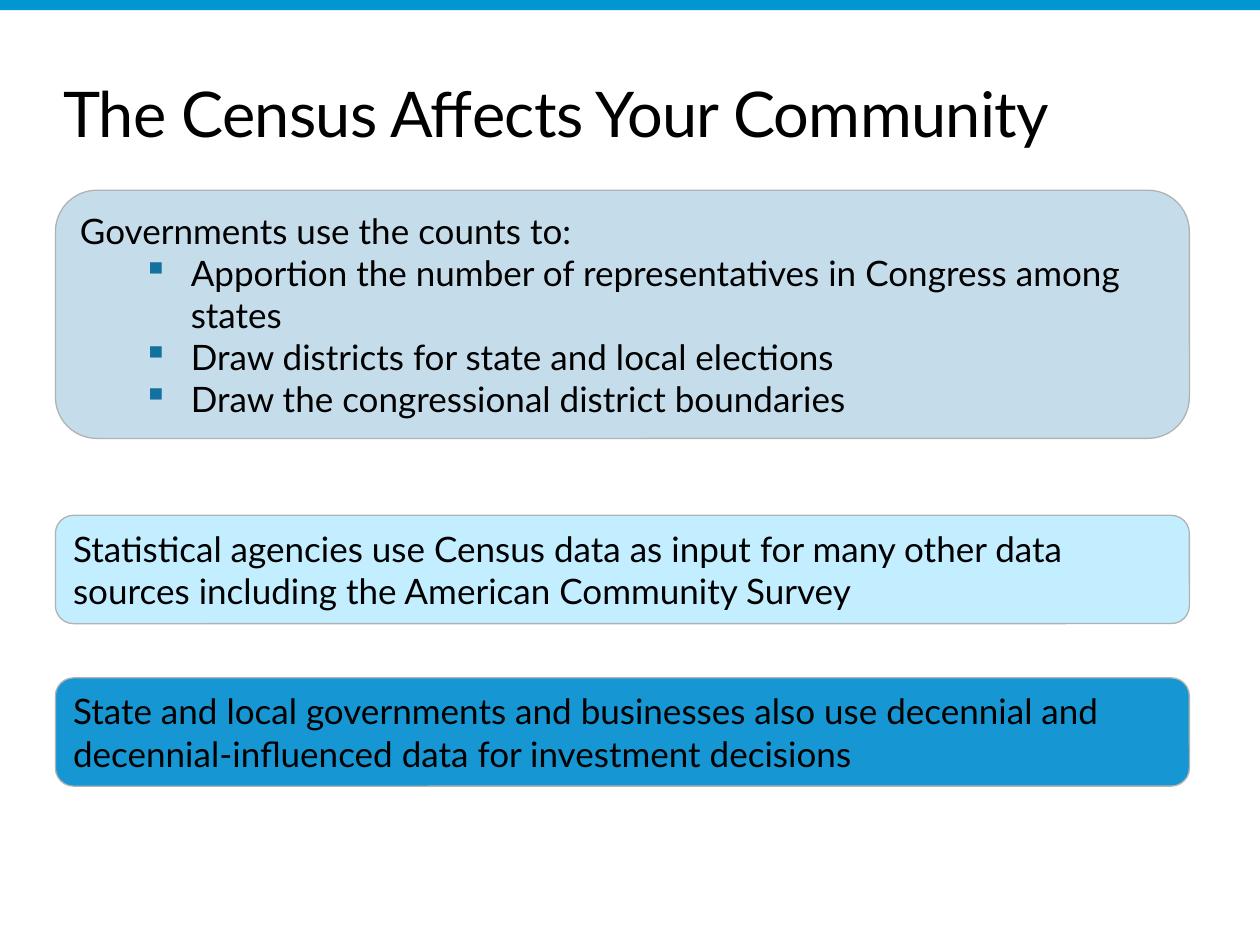
from lxml import etree
from pptx import Presentation
from pptx.dml.color import RGBColor
from pptx.enum.shapes import MSO_SHAPE
from pptx.enum.text import MSO_ANCHOR, PP_ALIGN
from pptx.oxml.ns import qn
from pptx.util import Inches, Pt

RECT, ROUNDED = MSO_SHAPE.RECTANGLE, MSO_SHAPE.ROUNDED_RECTANGLE
MIDDLE, LEFT = MSO_ANCHOR.MIDDLE, PP_ALIGN.LEFT

BLACK = RGBColor(0x00, 0x00, 0x00)
BAR_BLUE = RGBColor(0x00, 0x96, 0xD2)
PALE_BLUE = RGBColor(0xC5, 0xDD, 0xEB)
LIGHT_CYAN = RGBColor(0xC3, 0xEE, 0xFF)
STRONG_BLUE = RGBColor(0x16, 0x96, 0xD2)
BORDER_GRAY = RGBColor(0xB1, 0xB3, 0xB1)
BULLET_BLUE = RGBColor(0x12, 0x71, 0x9E)

FONT = "Lato"
SLIDE_W, SLIDE_H = 10, 7.5
CARD_LEFT, CARD_W = 0.44, 9

# Top, height, fill, lead sentence and bullets of each card
CARDS = [
    (1.51, 1.97, PALE_BLUE, "Governments use the counts to:",
     ["Apportion the number of representatives in Congress among states",
      "Draw districts for state and local elections",
      "Draw the congressional district boundaries"]),
    (4.09, 0.86, LIGHT_CYAN,
     "Statistical agencies use Census data as input for many other data "
     "sources including the American Community Survey", []),
    (5.38, 0.86, STRONG_BLUE,
     "State and local governments and businesses also use decennial and "
     "decennial-influenced data for investment decisions", []),
]


def add_bullet(p, indent=0.88, hanging=0.38):
    p.level = 1
    pPr = p._p.get_or_add_pPr()
    pPr.set("marL", str(Inches(indent)))
    pPr.set("indent", str(-Inches(hanging)))
    color = etree.SubElement(pPr, qn("a:buClr"))
    etree.SubElement(color, qn("a:srgbClr"), val=str(BULLET_BLUE))
    etree.SubElement(pPr, qn("a:buChar"), char="▪")


def write(p, text, size=20, color=BLACK, bullet=False, spacing=None):
    p.alignment = LEFT
    if bullet:
        add_bullet(p)
    r = p.add_run()
    r.text = text
    r.font.name, r.font.size = FONT, Pt(size)
    r.font.color.rgb = color
    if spacing is not None:
        r._r.get_or_add_rPr().set("spc", str(round(spacing * 100)))


def add_box(s, kind, left, top, width, height, fill, line=None):
    sp = s.shapes.add_shape(kind, Inches(left), Inches(top),
                            Inches(width), Inches(height))
    sp.shadow.inherit = False
    sp.fill.solid()
    sp.fill.fore_color.rgb = fill
    if line is None:
        sp.line.fill.background()
    else:
        sp.line.color.rgb, sp.line.width = line, Pt(0.75)
    return sp


def add_title(s, text):
    sp = s.shapes.title
    sp.left, sp.top = Inches(0.5), Inches(0.58)
    sp.width, sp.height = Inches(9), Inches(0.62)
    tf = sp.text_frame
    tf.margin_left = tf.margin_top = tf.margin_right = tf.margin_bottom = 0
    tf.word_wrap, tf.vertical_anchor = True, MIDDLE
    write(tf.paragraphs[0], text, size=36, spacing=-0.4)


def add_card(s, top, height, fill, lead, bullets):
    sp = add_box(s, ROUNDED, CARD_LEFT, top, CARD_W, height, fill, BORDER_GRAY)
    tf = sp.text_frame
    tf.word_wrap, tf.vertical_anchor = True, MIDDLE
    write(tf.paragraphs[0], lead)
    for text in bullets:
        write(tf.add_paragraph(), text, bullet=True)


def main():
    prs = Presentation()
    prs.slide_width, prs.slide_height = Inches(SLIDE_W), Inches(SLIDE_H)
    s = prs.slides.add_slide(prs.slide_layouts[5])

    # Bar along the top edge, then title and cards
    add_box(s, RECT, 0, 0, SLIDE_W, 0.08, BAR_BLUE)
    add_title(s, "The Census Affects Your Community")
    for card in CARDS:
        add_card(s, *card)

    prs.save("out.pptx")


if __name__ == "__main__":
    main()
